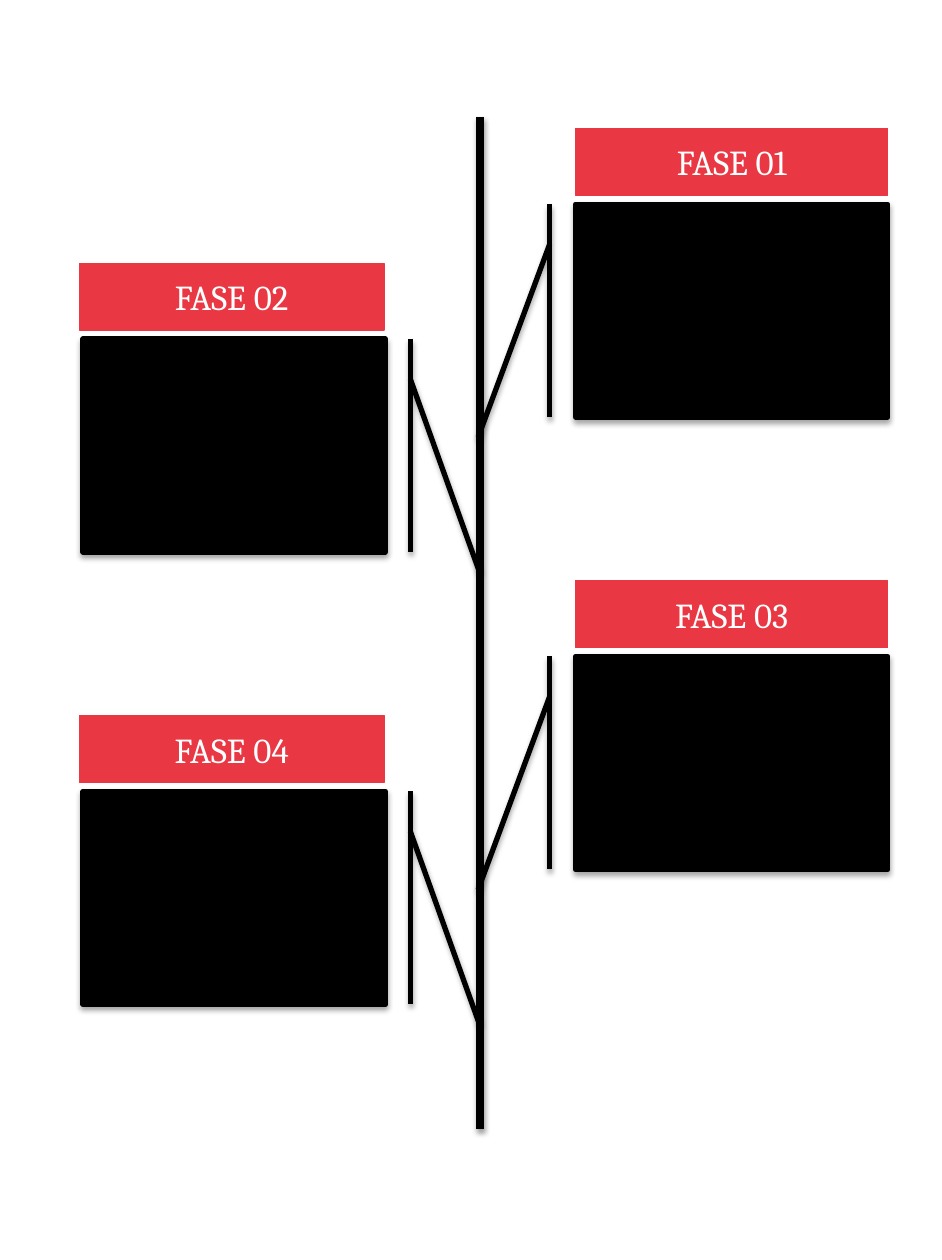
from lxml import etree
from pptx import Presentation
from pptx.dml.color import RGBColor
from pptx.enum.shapes import MSO_CONNECTOR, MSO_SHAPE
from pptx.enum.text import MSO_ANCHOR, PP_ALIGN
from pptx.oxml.ns import qn
from pptx.util import Inches, Pt

BLACK = RGBColor(0x00, 0x00, 0x00)
RED = RGBColor(0xE9, 0x38, 0x44)
WHITE = RGBColor(0xFF, 0xFF, 0xFF)


def add_shadow(shape_properties, distance, opacity):
    """Add a soft black shadow that falls straight down."""
    effects = shape_properties.find(qn("a:effectLst"))
    if effects is None:
        effects = etree.SubElement(shape_properties, qn("a:effectLst"))
    shadow = etree.SubElement(
        effects, qn("a:outerShdw"), blurRad=str(Pt(3.1)),
        dist=str(Pt(distance)), dir="5400000", rotWithShape="0")
    color = etree.SubElement(shadow, qn("a:srgbClr"), val=str(BLACK))
    etree.SubElement(color, qn("a:alpha"), val=str(opacity * 1000))


prs = Presentation()
prs.slide_width = Inches(7.48)
prs.slide_height = Inches(10)
slide = prs.slides.add_slide(prs.slide_layouts[6])

# Central timeline
timeline = slide.shapes.add_connector(
    MSO_CONNECTOR.STRAIGHT,
    Inches(3.81), Inches(0.93), Inches(3.81), Inches(8.96))
timeline.line.color.rgb = BLACK
timeline.line.width = Pt(4.5)
add_shadow(timeline._element.spPr, 1.6, 38)

# Phases alternate right and left: header left and width, panel left and width
SIDES = [(4.57, 2.48, 4.57, 2.48), (0.63, 2.42, 0.66, 2.4)]
FIRST_TOP, SIDE_STEP, PAIR_STEP = 1.02, 1.07, 3.59

for phase in range(4):
    pair, side = divmod(phase, 2)
    header_left, header_width, panel_left, panel_width = SIDES[side]
    top = FIRST_TOP + pair * PAIR_STEP + side * SIDE_STEP

    # Panel with an accent bar and a leader to the timeline
    panel = slide.shapes.add_shape(
        MSO_SHAPE.LINE_CALLOUT_1_BORDER_AND_ACCENT_BAR,
        Inches(panel_left), Inches(top + 0.6),
        Inches(panel_width), Inches(1.69))
    for index, value in enumerate((0.188, -0.083, 1.095, -0.312)):
        panel.adjustments[index] = value
    if side == 1:
        panel._element.spPr.xfrm.set("flipH", "1")
    panel.fill.solid()
    panel.fill.fore_color.rgb = BLACK
    panel.line.color.rgb = BLACK
    panel.line.width = Pt(3)
    panel.shadow.inherit = False
    add_shadow(panel._element.spPr, 1.8, 35)

    # Phase header
    header = slide.shapes.add_shape(
        MSO_SHAPE.RECTANGLE, Inches(header_left), Inches(top),
        Inches(header_width), Inches(0.53))
    header.shadow.inherit = False
    header.fill.solid()
    header.fill.fore_color.rgb = RED
    header.line.color.rgb = RED
    header.line.width = Pt(0.75)
    header.text_frame.vertical_anchor = MSO_ANCHOR.MIDDLE
    title = header.text_frame.paragraphs[0]
    title.text = f"FASE {phase + 1:02d}"
    title.alignment = PP_ALIGN.CENTER
    title.font.name = "Cambria"
    title.font.size = Pt(20)
    title.font.color.rgb = WHITE

prs.save("out.pptx")
